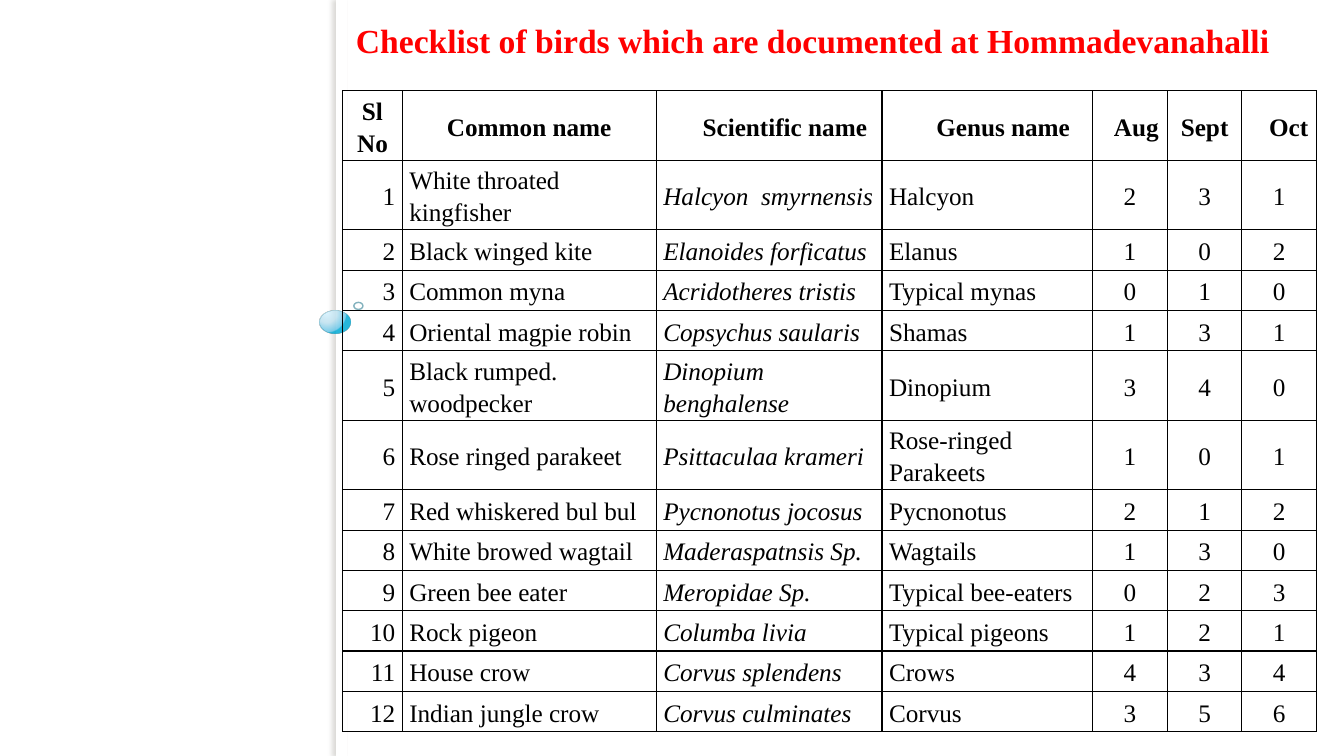
from dataclasses import dataclass
from typing import NamedTuple

from lxml.etree import SubElement
from pptx import Presentation
from pptx.dml.color import RGBColor
from pptx.enum.shapes import MSO_SHAPE as Preset
from pptx.enum.text import MSO_ANCHOR as Anchor, MSO_AUTO_SIZE as AutoSize, PP_ALIGN as Align
from pptx.oxml import parse_xml
from pptx.oxml.ns import nsdecls, qn
from pptx.util import Emu, Inches, Pt

SLIDE_WIDTH, SLIDE_HEIGHT = Inches(13.33), Inches(7.5)
FONT = "Times New Roman"
BLACK, RED, WHITE = "000000", "FF0000", "FFFFFF"
CELL_MARGIN = 0.07
SPACE_WIDTH = 0.0625  # inches, one space at 18 points


@dataclass(frozen=True)
class Box:
    """Position and size in percent of the slide."""
    left: float
    top: float
    width: float
    height: float

    def lengths(self) -> tuple[Emu, Emu, Emu, Emu]:
        return across(self.left), down(self.top), across(self.width), down(self.height)


@dataclass(frozen=True)
class Column:
    heading: str
    width: float  # percent of the slide's width
    align: Align = Align.CENTER
    italic: bool = False
    heading_indent: int = 0  # in spaces


class Bird(NamedTuple):
    common: str
    scientific: str
    genus: str
    august: int
    september: int
    october: int


PANEL = Box(25, 0, 0.83, 100)
LARGE_BUBBLE = Box(23.78, 41.07, 2.33, 3.07)
SMALL_BUBBLE = Box(26.33, 40, 0.68, 0.93)
TITLE = Box(25.73, 2, 70.14, 6.67)
TABLE = Box(25.5, 12, 72.39, 84.4)
SINGLE_ROW, DOUBLE_ROW = 5.33, 9.2
DOUBLE_ROWS = {0, 1, 5, 6}

COLUMNS = [
    Column("Sl No", 4.43, Align.RIGHT),
    Column("Common name", 18.9, Align.LEFT),
    Column("Scientific name", 16.8, Align.LEFT, italic=True, heading_indent=5),
    Column("Genus name", 15.68, Align.LEFT, heading_indent=5),
    Column("Aug", 5.55, heading_indent=2),
    Column("Sept", 5.55),
    Column("Oct", 5.55, heading_indent=3),
]

BIRDS = [
    Bird("White throated kingfisher", "Halcyon  smyrnensis", "Halcyon", 2, 3, 1),
    Bird("Black winged kite", "Elanoides forficatus", "Elanus", 1, 0, 2),
    Bird("Common myna", "Acridotheres tristis", "Typical mynas", 0, 1, 0),
    Bird("Oriental magpie robin", "Copsychus saularis", "Shamas", 1, 3, 1),
    Bird("Black rumped. woodpecker", "Dinopium benghalense", "Dinopium", 3, 4, 0),
    Bird("Rose ringed parakeet", "Psittaculaa krameri", "Rose-ringed Parakeets", 1, 0, 1),
    Bird("Red whiskered bul bul", "Pycnonotus jocosus", "Pycnonotus", 2, 1, 2),
    Bird("White browed wagtail", "Maderaspatnsis Sp.", "Wagtails", 1, 3, 0),
    Bird("Green bee eater", "Meropidae Sp.", "Typical bee-eaters", 0, 2, 3),
    Bird("Rock pigeon", "Columba livia", "Typical pigeons", 1, 2, 1),
    Bird("House crow", "Corvus splendens", "Crows", 4, 3, 4),
    Bird("Indian jungle crow", "Corvus culminates", "Corvus", 3, 5, 6),
]

BUBBLE_STOPS = [(0, "DAF4FF", 95), (50, "C3E3F0", 90), (95, "6BC7E8", 88), (100, "00ABD5", 85)]


def across(percent: float) -> Emu:
    return Emu(round(SLIDE_WIDTH * percent / 100))


def down(percent: float) -> Emu:
    return Emu(round(SLIDE_HEIGHT * percent / 100))


def color(value: str) -> RGBColor:
    return RGBColor.from_string(value)


def write(text_frame, text: str, *, size: float, fill: str = BLACK, bold: bool = False,
          italic: bool = False, align: Align = Align.LEFT, spacing: float = 1.0) -> None:
    paragraph = text_frame.paragraphs[0]
    paragraph.alignment, paragraph.line_spacing = align, spacing
    paragraph.space_before = paragraph.space_after = Pt(0)
    run = paragraph.add_run()
    run.text = text
    font = run.font
    font.name, font.size, font.bold, font.italic = FONT, Pt(size), bold, italic
    font.color.rgb = color(fill)


def add_plain_shape(slide, preset: Preset, box: Box):
    shape = slide.shapes.add_shape(preset, *box.lengths())
    shape.shadow.inherit = False
    shape.fill.background()
    shape.line.fill.background()
    return shape


def add_panel(slide) -> None:
    panel = add_plain_shape(slide, Preset.RECTANGLE, PANEL)
    panel.fill.solid()
    panel.fill.fore_color.rgb = color(WHITE)
    effects = panel._element.spPr.find(qn("a:effectLst"))
    effects.append(parse_xml(
        f'<a:outerShdw {nsdecls("a")} blurRad="{Pt(3)}" dist="{Pt(3)}" dir="10800000" '
        'algn="tl" rotWithShape="0"><a:srgbClr val="736F63">'
        '<a:alpha val="25000"/></a:srgbClr></a:outerShdw>'))


def add_bubble(slide, box: Box, line: str, width: float):
    bubble = add_plain_shape(slide, Preset.OVAL, box)
    bubble.line.color.rgb = color(line)
    bubble.line.width = Pt(width)
    line_color = next(bubble.line._ln.iter(qn("a:srgbClr")))
    SubElement(line_color, qn("a:alpha"), val="60000")
    return bubble


def fill_with_glow(shape) -> None:
    """Give the shape a translucent radial gradient."""
    stops = "".join(
        f'<a:gs pos="{place * 1000}"><a:srgbClr val="{value}">'
        f'<a:alpha val="{opacity * 1000}"/></a:srgbClr></a:gs>'
        for place, value, opacity in BUBBLE_STOPS)
    properties = shape._element.spPr
    properties.replace(properties.find(qn("a:noFill")), parse_xml(
        f'<a:gradFill {nsdecls("a")} rotWithShape="1"><a:gsLst>{stops}</a:gsLst>'
        '<a:path path="circle"><a:fillToRect l="25000" t="12000" r="75000" b="88000"/>'
        '</a:path></a:gradFill>'))


def set_title(slide, text: str) -> None:
    title = slide.shapes.title
    title.left, title.top, title.width, title.height = TITLE.lengths()
    frame = title.text_frame
    frame.word_wrap, frame.auto_size = False, AutoSize.SHAPE_TO_FIT_TEXT
    frame.vertical_anchor = Anchor.MIDDLE
    write(frame, text, size=24, fill=RED, bold=True)
    slide.shapes._spTree.append(title._element)


def border_cell(cell) -> None:
    properties = cell._tc.get_or_add_tcPr()
    for position, side in enumerate(("lnL", "lnR", "lnT", "lnB")):
        properties.insert(position, parse_xml(
            f'<a:{side} {nsdecls("a")} w="{Pt(1)}"><a:solidFill>'
            f'<a:srgbClr val="{BLACK}"/></a:solidFill></a:{side}>'))


def add_bird_table(slide) -> None:
    rows = [[column.heading for column in COLUMNS]]
    rows += [[str(value) for value in (number, *bird)] for number, bird in enumerate(BIRDS, 1)]
    table = slide.shapes.add_table(len(rows), len(COLUMNS), *TABLE.lengths()).table
    table.first_row = table.horz_banding = False
    for index, column in enumerate(COLUMNS):
        table.columns[index].width = across(column.width)
    for row_index, values in enumerate(rows):
        table.rows[row_index].height = down(DOUBLE_ROW if row_index in DOUBLE_ROWS else SINGLE_ROW)
        heading = row_index == 0
        for column_index, (column, value) in enumerate(zip(COLUMNS, values)):
            cell = table.cell(row_index, column_index)
            indent = column.heading_indent * SPACE_WIDTH if heading else 0
            cell.margin_left, cell.margin_right = Inches(CELL_MARGIN + indent), Inches(CELL_MARGIN)
            cell.margin_top = cell.margin_bottom = 0
            cell.vertical_anchor = Anchor.MIDDLE
            cell.fill.background()
            border_cell(cell)
            write(cell.text_frame, value, size=18, bold=heading, spacing=1.15,
                  italic=column.italic and not heading,
                  align=Align.CENTER if heading else column.align)


def main() -> None:
    presentation = Presentation()
    presentation.slide_width, presentation.slide_height = SLIDE_WIDTH, SLIDE_HEIGHT
    slide = presentation.slides.add_slide(presentation.slide_layouts.get_by_name("Title Only"))
    add_panel(slide)
    fill_with_glow(add_bubble(slide, LARGE_BUBBLE, "308EA5", 0.16))
    add_bubble(slide, SMALL_BUBBLE, "318093", 1)
    set_title(slide, "Checklist of birds which are documented at Hommadevanahalli")
    add_bird_table(slide)
    presentation.save("out.pptx")


if __name__ == "__main__":
    main()
